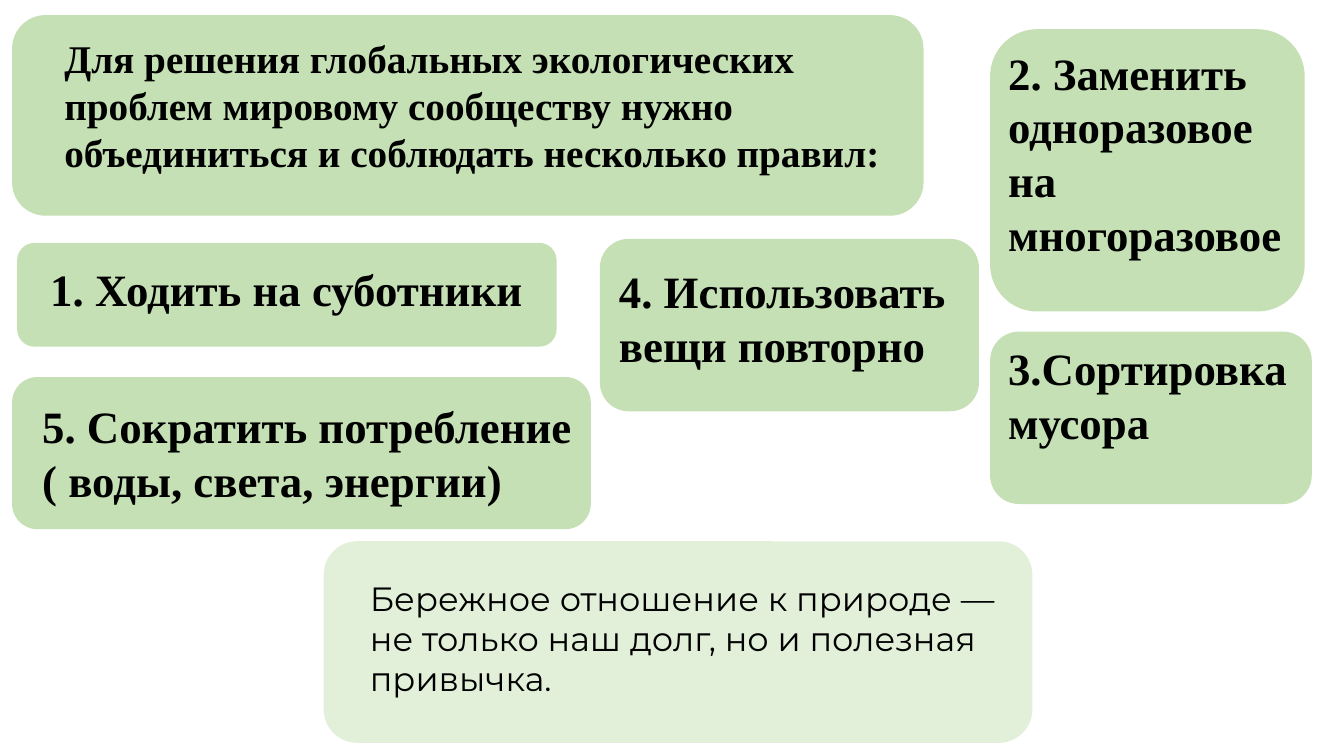
from dataclasses import dataclass

from pptx import Presentation
from pptx.dml.color import RGBColor
from pptx.enum.shapes import MSO_SHAPE
from pptx.enum.text import MSO_AUTO_SIZE
from pptx.util import Inches, Pt

SOFT_PANEL = MSO_SHAPE.FLOWCHART_ALTERNATE_PROCESS
ROUND_PANEL = MSO_SHAPE.ROUNDED_RECTANGLE
GROW = MSO_AUTO_SIZE.SHAPE_TO_FIT_TEXT


@dataclass(frozen=True)
class Theme:
    green: RGBColor = RGBColor(0xC5, 0xE0, 0xB4)
    pale_green: RGBColor = RGBColor(0xE2, 0xF0, 0xD9)
    ink: RGBColor = RGBColor(0, 0, 0)
    serif: str = "Times New Roman"
    sans: str = "Montserrat"
    intro_size: int = 28
    rule_size: int = 32
    motto_size: int = 24


THEME = Theme()

# Panel outline, panel box, text box, lines, wrapping
RULES = [
    (SOFT_PANEL, (0.17, 2.41, 5.35, 1.03), (0.4, 2.55, 4.93, 0.64),
     ["1. Ходить на суботники"], False),
    (SOFT_PANEL, (9.82, 0.29, 3.12, 2.8), (9.9, 0.4, 2.92, 2.26),
     ["2. Заменить одноразовое на многоразовое"], True),
    (ROUND_PANEL, (9.82, 3.29, 3.19, 1.71), (9.9, 3.33, 3.1, 1.18),
     ["3.Сортировка", "мусора"], False),
    (SOFT_PANEL, (5.95, 2.37, 3.76, 1.71), (6.04, 2.57, 4.19, 1.07),
     ["4. Использовать вещи повторно"], True),
    (SOFT_PANEL, (0.12, 3.74, 5.74, 1.51), (0.32, 3.91, 5.73, 1.18),
     ["5. Сократить потребление", "( воды, света, энергии)"], True),
]


def add_panel(shapes, outline, box, color):
    panel = shapes.add_shape(outline, *map(Inches, box))
    panel.shadow.inherit = False
    panel.fill.solid()
    panel.fill.fore_color.rgb = color
    panel.line.fill.background()


def add_text(shapes, box, lines, *, size, font=THEME.serif, bold=True, wrap=True):
    frame = shapes.add_textbox(*map(Inches, box)).text_frame
    frame.word_wrap = wrap
    frame.auto_size = GROW
    frame.text = "\n".join(lines)
    for paragraph in frame.paragraphs:
        for run in paragraph.runs:
            run.font.name = font
            run.font.size = Pt(size)
            run.font.bold = bold
            run.font.color.rgb = THEME.ink


def add_card(shapes, outline, panel_box, text_box, lines, color=THEME.green, **text_format):
    """Group a coloured panel with the text that lies on it."""
    card = shapes.add_group_shape().shapes
    add_panel(card, outline, panel_box, color)
    add_text(card, text_box, lines, **text_format)


def main():
    deck = Presentation()
    deck.slide_width = Inches(13.33)
    deck.slide_height = Inches(7.5)
    shapes = deck.slides.add_slide(deck.slide_layouts[6]).shapes

    add_panel(shapes, SOFT_PANEL, (0.12, 0.15, 9.04, 1.99), THEME.green)
    add_text(
        shapes, (0.54, 0.29, 8.94, 1.51),
        ["Для решения глобальных экологических проблем мировому сообществу "
         "нужно объединиться и соблюдать несколько правил:"],
        size=THEME.intro_size,
    )
    for outline, panel_box, text_box, lines, wrap in RULES:
        add_card(shapes, outline, panel_box, text_box, lines,
                 size=THEME.rule_size, wrap=wrap)
    add_card(
        shapes, ROUND_PANEL, (3.21, 5.37, 7.03, 2), (3.57, 5.68, 6.67, 1.31),
        ["Бережное отношение к природе — не только наш долг, "
         "но и полезная привычка."],
        color=THEME.pale_green, size=THEME.motto_size, font=THEME.sans, bold=False,
    )
    deck.save("out.pptx")


if __name__ == "__main__":
    main()
